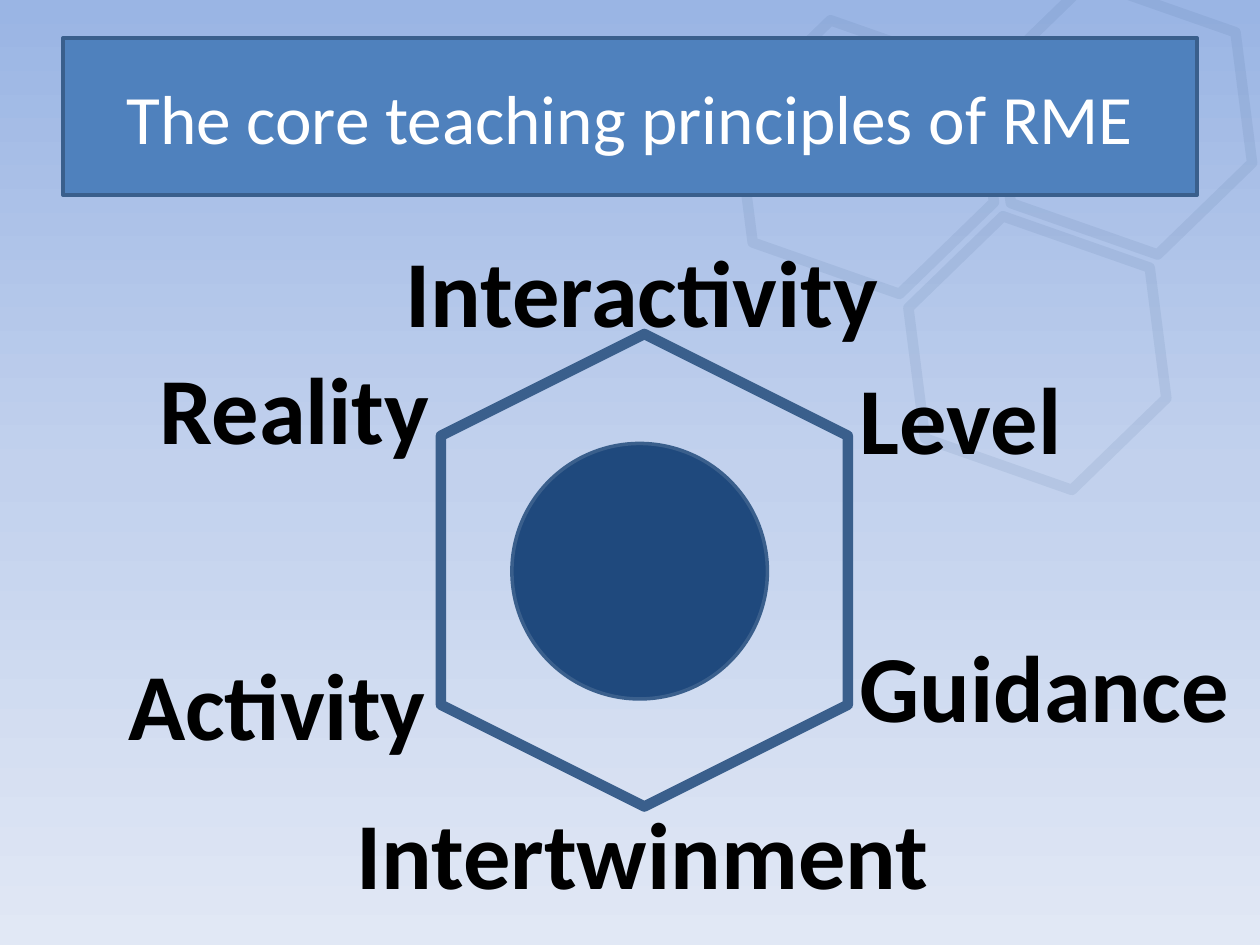
import copy
from dataclasses import dataclass

import pptx
import pptx.dml.color
import pptx.enum.shapes
import pptx.enum.text
import pptx.oxml
import pptx.oxml.ns
import pptx.util

Pt = pptx.util.Pt
SHAPE = pptx.enum.shapes.MSO_SHAPE
qn = pptx.oxml.ns.qn


@dataclass(frozen=True)
class Theme:
    """Colours, type sizes and line widths of the slide."""
    sky: tuple = ((0, "9AB5E4"), (0.5, "C2D1ED"), (1, "E1E8F5"))
    banner: str = "4F81BD"
    outline: str = "3A5F8C"
    core: str = "1F497D"
    title_text: str = "FFFFFF"
    label_text: str = "000000"
    font: str = "Calibri"
    title_size: float = 39.6
    label_size: float = 54
    thin: float = 2
    thick: float = 6
    faint_alpha: int = 10000


THEME = Theme()
LABELS = [
    ("Activity", 0, 236, 186.5),
    ("Reality", 18, 67, 170),
    ("Level", 418, 72.5, 131),
    ("Intertwinment", 130.5, 321, 345),
    ("Interactivity", 158.5, 0, 288),
    ("Guidance", 418, 225.5, 227.5),
]


def rgb(value):
    """Return a colour object for a hex string."""
    return pptx.dml.color.RGBColor.from_string(value)


def style_shape(sp, width, fill=None):
    """Give a shape its outline and its solid or empty fill."""
    if fill:
        sp.fill.solid()
        sp.fill.fore_color.rgb = rgb(fill)
    else:
        sp.fill.background()
    sp.line.color.rgb = rgb(THEME.outline)
    sp.line.width = Pt(width)


def add_outline(shapes, kind, box, width, fill=None, rotation=0):
    """Add a preset shape without shadow."""
    sp = shapes.add_shape(kind, *map(Pt, box))
    sp.shadow.inherit = False
    sp.rotation = rotation
    style_shape(sp, width, fill)
    return sp


def style_text(p, size, color, bold=False):
    """Format the runs of a paragraph."""
    for r in p.runs:
        r.font.name = THEME.font
        r.font.size = Pt(size)
        r.font.bold = bold
        r.font.color.rgb = rgb(color)


def paint_background(s):
    """Fill the slide with a vertical three-stop gradient."""
    fill = s.background.fill
    fill.gradient()
    fill.gradient_angle = 270
    first = fill._fill._gradFill.find(qn("a:gsLst"))[0]
    first.addnext(copy.deepcopy(first))
    for stop, (position, color) in zip(fill.gradient_stops, THEME.sky):
        stop.position = position
        stop.color.rgb = rgb(color)


def add_honeycomb(s, box):
    """Place three faint tilted hexagons in the corner."""
    left, top, width, height = box
    group = s.shapes.add_group_shape()
    for dx, dy in ((0, 22.5), (98.5, 134.5), (147.5, 0)):
        sp = add_outline(group.shapes, SHAPE.HEXAGON,
                         (left + dx, top + dy, width, height),
                         THEME.thick, rotation=19.3)
        color = sp.line.fill._xPr.find(".//" + qn("a:srgbClr"))
        alpha = pptx.oxml.parse_xml(
            f'<a:alpha {pptx.oxml.ns.nsdecls("a")} val="{THEME.faint_alpha}"/>')
        color.append(alpha)


def add_title(s, box, text):
    """Turn the title placeholder into a filled banner above the honeycomb."""
    sp = s.shapes.title
    sp.left, sp.top, sp.width, sp.height = map(Pt, box)
    style_shape(sp, THEME.thin, THEME.banner)
    tf = sp.text_frame
    tf.text = text
    tf.vertical_anchor = pptx.enum.text.MSO_ANCHOR.MIDDLE
    p = tf.paragraphs[0]
    p.alignment = pptx.enum.text.PP_ALIGN.CENTER
    style_text(p, THEME.title_size, THEME.title_text)
    sp.element.getparent().append(sp.element)


def add_label(s, box, text):
    """Add one bold principle name."""
    sp = s.shapes.add_textbox(*map(Pt, box))
    tf = sp.text_frame
    tf.word_wrap = False
    tf.auto_size = pptx.enum.text.MSO_AUTO_SIZE.SHAPE_TO_FIT_TEXT
    tf.text = text
    style_text(tf.paragraphs[0], THEME.label_size, THEME.label_text, True)


def add_principles(s, box):
    """Place the hexagon, its labels and the core disc."""
    left, top = box
    add_outline(s.shapes, SHAPE.HEXAGON, (left + 167, top + 80, 270, 232.5),
                THEME.thick, rotation=90)
    for text, dx, dy, width in LABELS:
        add_label(s, (left + dx, top + dy, width, 72.7), text)
    add_outline(s.shapes, SHAPE.OVAL, (left + 226.3, top + 123.8, 146, 146),
                THEME.thin, THEME.core)


def main():
    """Build and save the slide."""
    prs = pptx.Presentation()
    prs.slide_width, prs.slide_height = Pt(720), Pt(540)
    s = prs.slides.add_slide(prs.slide_layouts[5])
    paint_background(s)
    add_honeycomb(s, (416.2, 0, 156.2, 134.6))
    add_title(s, (36, 21.6, 648, 90), "The core teaching principles of RME")
    add_principles(s, (66.2, 129.6))
    prs.save("out.pptx")


if __name__ == "__main__":
    main()
